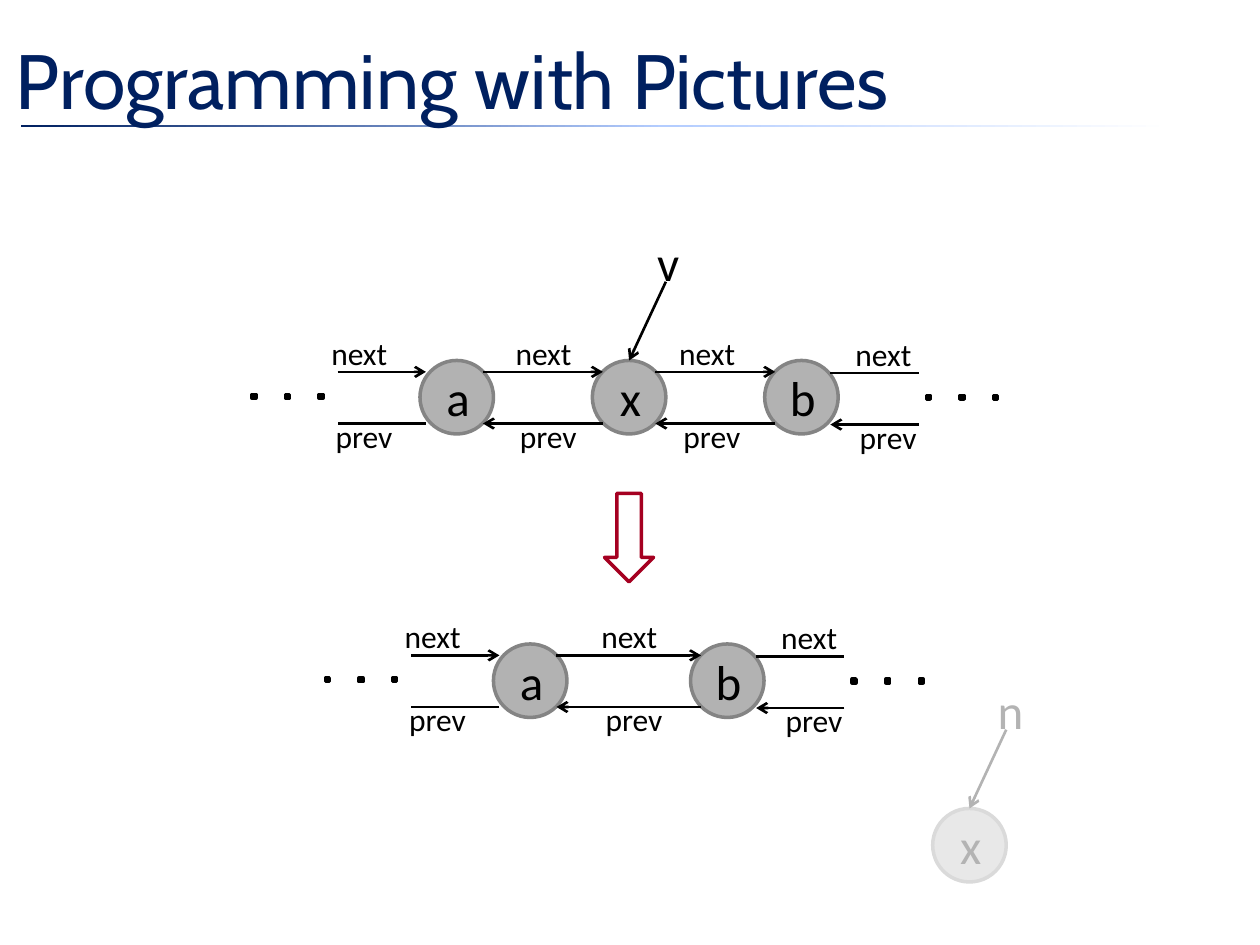
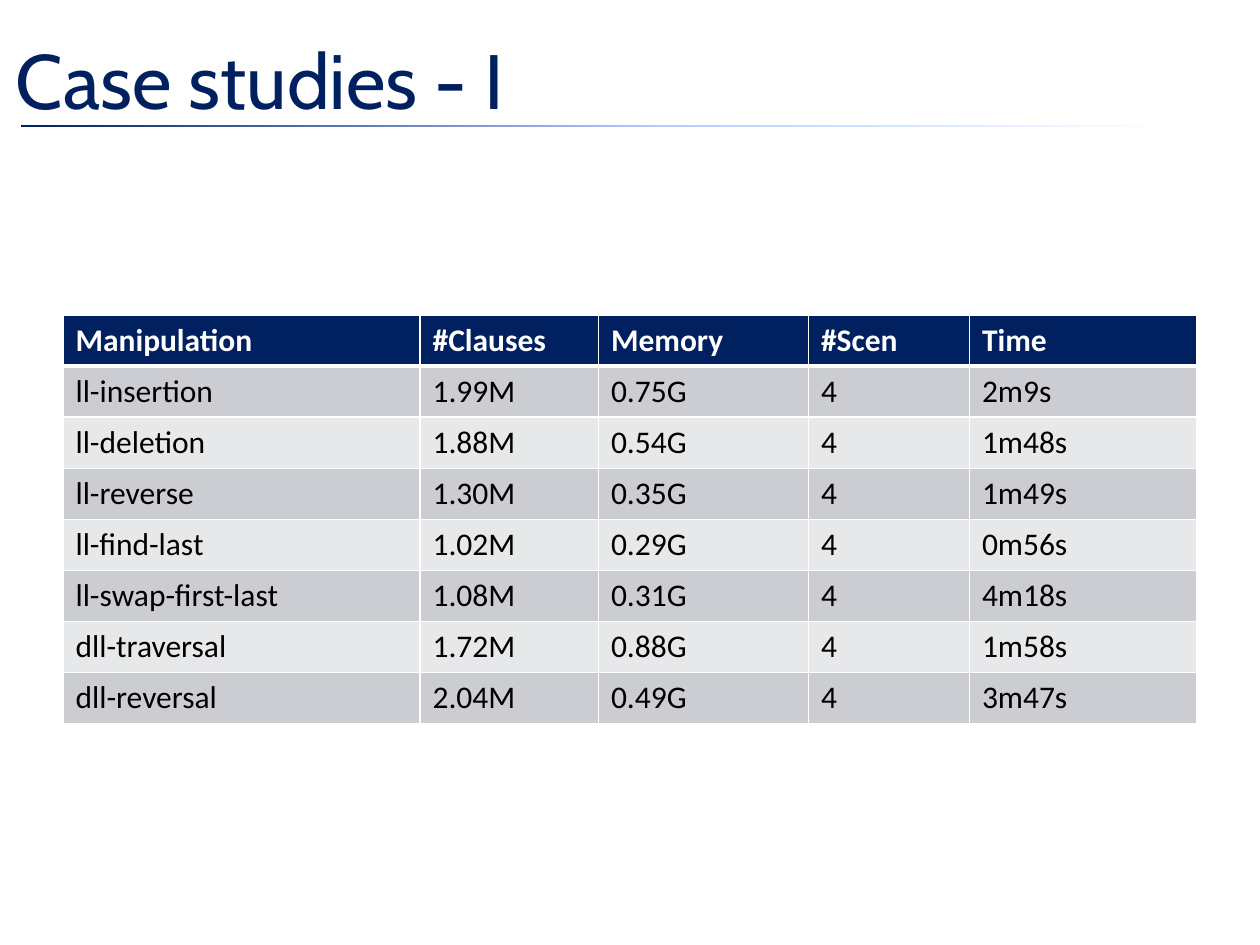
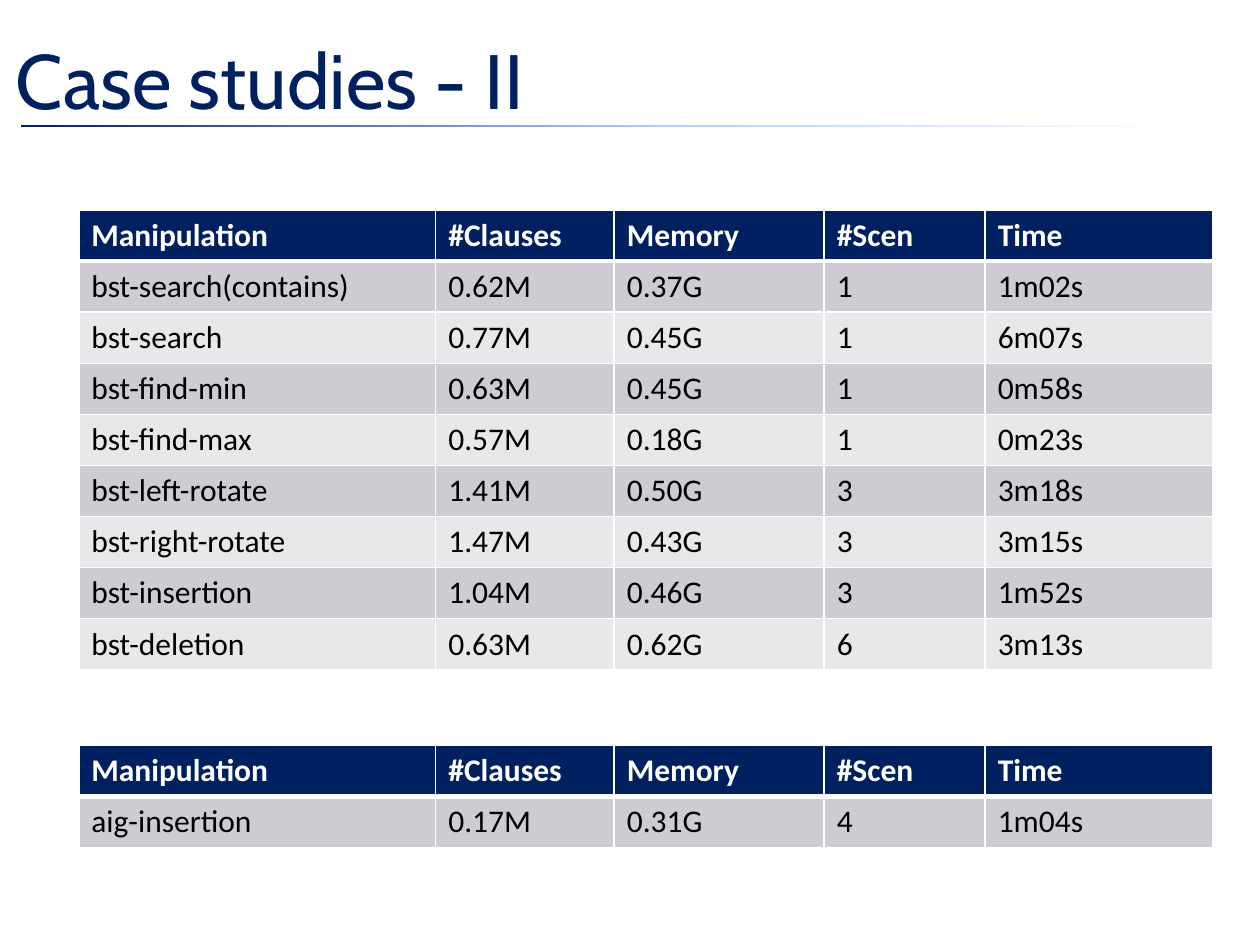
import copy
import dataclasses

import pptx
import pptx.dml.color
import pptx.enum.dml
import pptx.enum.shapes
import pptx.enum.text
import pptx.oxml
import pptx.oxml.ns
import pptx.util

Pt = pptx.util.Pt
qn = pptx.oxml.ns.qn
Kind = pptx.enum.shapes.MSO_SHAPE
Align = pptx.enum.text.PP_ALIGN
Anchor = pptx.enum.text.MSO_ANCHOR


@dataclasses.dataclass(frozen=True)
class Theme:
    navy: str = "002060"
    sky: str = "B4CDFF"
    white: str = "FFFFFF"
    black: str = "000000"
    red: str = "A50021"
    node: str = "B2B2B2"
    rim: str = "848484"
    odd: str = "CCCDD2"
    even: str = "E7E8EA"
    head: str = "Cabin"
    body: str = "Calibri"
    title: int = 44
    name: int = 28
    label: int = 18
    stroke: float = 1.5
    edge: int = 2


T = Theme()

# Chain measures, from the top left of a node
SIZE = 42
NEXT, PREV = 6.5, 36
REACH = 50.4
COLS = (204, 102, 120, 92, 130)
ROW = 29.2
HEADS = ("Manipulation", "#Clauses", "Memory", "#Scen", "Time")
LISTS = (
    ("ll-insertion", "1.99M", "0.75G", "4", "2m9s"),
    ("ll-deletion", "1.88M", "0.54G", "4", "1m48s"),
    ("ll-reverse", "1.30M", "0.35G", "4", "1m49s"),
    ("ll-find-last", "1.02M", "0.29G", "4", "0m56s"),
    ("ll-swap-first-last", "1.08M", "0.31G", "4", "4m18s"),
    ("dll-traversal", "1.72M", "0.88G", "4", "1m58s"),
    ("dll-reversal", "2.04M", "0.49G", "4", "3m47s"),
)
TREES = (
    ("bst-search(contains)", "0.62M", "0.37G", "1", "1m02s"),
    ("bst-search", "0.77M", "0.45G", "1", "6m07s"),
    ("bst-find-min", "0.63M", "0.45G", "1", "0m58s"),
    ("bst-find-max", "0.57M", "0.18G", "1", "0m23s"),
    ("bst-left-rotate", "1.41M", "0.50G", "3", "3m18s"),
    ("bst-right-rotate", "1.47M", "0.43G", "3", "3m15s"),
    ("bst-insertion", "1.04M", "0.46G", "3", "1m52s"),
    ("bst-deletion", "0.63M", "0.62G", "6", "3m13s"),
)
GRAPHS = (("aig-insertion", "0.17M", "0.31G", "4", "1m04s"),)


def rgb(code):
    return pptx.dml.color.RGBColor.from_string(code)


def write(frame, text, size, color=T.black, font=T.body, bold=False):
    run = frame.paragraphs[0].add_run()
    run.text = text
    run.font.size = Pt(size)
    run.font.name = font
    run.font.bold = bold
    run.font.color.rgb = rgb(color)


def shape(shapes, kind, x, y, w, h, fill, line=None):
    item = shapes.add_shape(kind, Pt(x), Pt(y), Pt(w), Pt(h))
    item.shadow.inherit = False
    item.fill.solid()
    item.fill.fore_color.rgb = rgb(fill)
    if line:
        item.line.color.rgb = rgb(line)
        item.line.width = Pt(T.edge)
    else:
        item.line.fill.background()
    return item


def label(shapes, text, x, y, w, h, size):
    box = shapes.add_textbox(Pt(x), Pt(y), Pt(w), Pt(h))
    box.text_frame.word_wrap = False
    box.text_frame.auto_size = pptx.enum.text.MSO_AUTO_SIZE.SHAPE_TO_FIT_TEXT
    write(box.text_frame, text, size)


def line(shapes, start, end, arrow=True):
    item = shapes.add_connector(
        pptx.enum.shapes.MSO_CONNECTOR.STRAIGHT, *map(Pt, start + end))
    item.line.color.rgb = rgb(T.black)
    item.line.width = Pt(T.stroke)
    props = item.element.spPr
    if arrow:
        tip = pptx.oxml.parse_xml(
            f'<a:tailEnd {pptx.oxml.ns.nsdecls("a")} type="arrow"/>')
        props.find(qn("a:ln")).append(tip)
    props.append(pptx.oxml.parse_xml(
        f'<a:effectLst {pptx.oxml.ns.nsdecls("a")}/>'))


def node(shapes, text, x, y):
    item = shape(shapes, Kind.OVAL, x, y, SIZE, SIZE, T.node, T.rim)
    frame = item.text_frame
    frame.margin_left, frame.margin_right = Pt(1.5), 0
    frame.vertical_anchor = Anchor.MIDDLE
    frame.paragraphs[0].alignment = Align.CENTER
    write(frame, text, T.name)


def link(shapes, x, end, y, shift, forth=True, back=True):
    """Draw a next line and a prev line; forth and back give arrowheads."""
    line(shapes, (x, y + NEXT), (end, y + NEXT), forth)
    label(shapes, "next", x + shift, y - 18.8, 46.8, 29, T.label)
    line(shapes, (end, y + PREV), (x, y + PREV), back)
    label(shapes, "prev", x + shift + 2.5, y + 28.6, 47.5, 29, T.label)


def dots(shapes, x, y):
    group = shapes.add_group_shape()
    for step in range(3):
        shape(group.shapes, Kind.RECTANGLE, x + 19.2 * step, y, 2.2, 2.2,
              T.black, T.black)


def chain(shapes, names, x, y, pitch, shifts):
    """Draw a doubly linked list that goes on at both ends."""
    spots = [x + pitch * i for i in range(len(names))]
    last = spots[-1]
    for name, spot in zip(names, spots):
        node(shapes, name, spot, y)
    for spot, after, shift in zip(spots, spots[1:], shifts):
        link(shapes, spot + 36, after + 6, y, shift)
    link(shapes, x + 3.4 - REACH, x + 3.4, y, -10.8, back=False)
    link(shapes, last + 37.5, last + 37.5 + REACH, y + 0.6, 7.2, forth=False)
    dots(shapes, x - 96, y + 19.4)
    dots(shapes, last + 92.4, y + 20)


def marker(shapes, name, x, y):
    """Draw a variable name and its arrow down to the point x, y."""
    line(shapes, (x + 21, y - 45), (x, y))
    label(shapes, name, x + 9, y - 76.5, 30, 41, T.name)


def ghost(shapes, x, y):
    """Draw the node that was taken out, faded by a veil."""
    group = shapes.add_group_shape().shapes
    node(group, "x", x, y)
    marker(group, "n", x + SIZE / 2, y)
    veil = shape(group, Kind.RECTANGLE, x - 6, y - 65.5, 67, 113, T.white)
    color = veil.element.spPr.find(qn("a:solidFill"))[0]
    color.append(pptx.oxml.parse_xml(
        f'<a:alpha {pptx.oxml.ns.nsdecls("a")} val="70000"/>'))


def edge(cell, side, width):
    cell._tc.get_or_add_tcPr().append(pptx.oxml.parse_xml(
        f'<a:ln{side} {pptx.oxml.ns.nsdecls("a")} w="{Pt(width)}">'
        f'<a:solidFill><a:srgbClr val="{T.white}"/></a:solidFill>'
        f'</a:ln{side}>'))


def table(shapes, rows, x, y):
    rows = (HEADS,) + rows
    grid = shapes.add_table(len(rows), len(COLS), Pt(x), Pt(y),
                            Pt(sum(COLS)), Pt(ROW * len(rows))).table
    for col, width in zip(grid.columns, COLS):
        col.width = Pt(width)
    for i, row in enumerate(rows):
        grid.rows[i].height = Pt(ROW)
        top = i == 0
        fill = T.navy if top else (T.even, T.odd)[i % 2]
        widths = {"L": 1, "R": 1, "T": 3 if i == 1 else 1, "B": 3 if top else 1}
        for j, text in enumerate(row):
            cell = grid.cell(i, j)
            for side, width in widths.items():
                edge(cell, side, width)
            cell.fill.solid()
            cell.fill.fore_color.rgb = rgb(fill)
            write(cell.text_frame, text, T.label,
                  T.white if top else T.black, bold=top)


def rule(shapes):
    """Draw the line below the title, fading to the right."""
    item = shape(shapes, Kind.RECTANGLE, 12, 71.3, 708, 1.4, T.navy)
    item.fill.gradient()
    item.fill.gradient_angle = 180
    stops = item.element.spPr.find(qn("a:gradFill")).find(qn("a:gsLst"))
    stops.append(copy.deepcopy(stops[-1]))
    fade = ((0.07, T.white), (0.48, T.sky), (1, T.navy))
    for stop, (place, color) in zip(item.fill.gradient_stops, fade):
        stop.position = place
        stop.color.rgb = rgb(color)


def page(deck, title):
    shapes = deck.slides.add_slide(deck.slide_layouts[6]).shapes
    rule(shapes)
    box = shapes.add_textbox(Pt(2), Pt(0), Pt(684), Pt(90))
    box.text_frame.word_wrap = True
    box.text_frame.vertical_anchor = Anchor.MIDDLE
    write(box.text_frame, title, T.title, T.navy, T.head)
    return shapes


def main():
    deck = pptx.Presentation()
    deck.slide_width, deck.slide_height = Pt(720), Pt(540)

    shapes = page(deck, "Programming with Pictures")
    chain(shapes, "axb", 240, 206, 98.5, (11.5, 6.5))
    marker(shapes, "v", 359.5, 206)
    shape(shapes, Kind.DOWN_ARROW, 345.5, 282, 28, 50.5, T.white, T.red)
    chain(shapes, "ab", 282, 368, 112.6, (18.5,))
    ghost(shapes, 533, 462)

    table(page(deck, "Case studies - I"), LISTS, 36, 180)

    shapes = page(deck, "Case studies - II")
    table(shapes, TREES, 45, 120)
    table(shapes, GRAPHS, 45, 426)

    deck.save("out.pptx")


if __name__ == "__main__":
    main()
